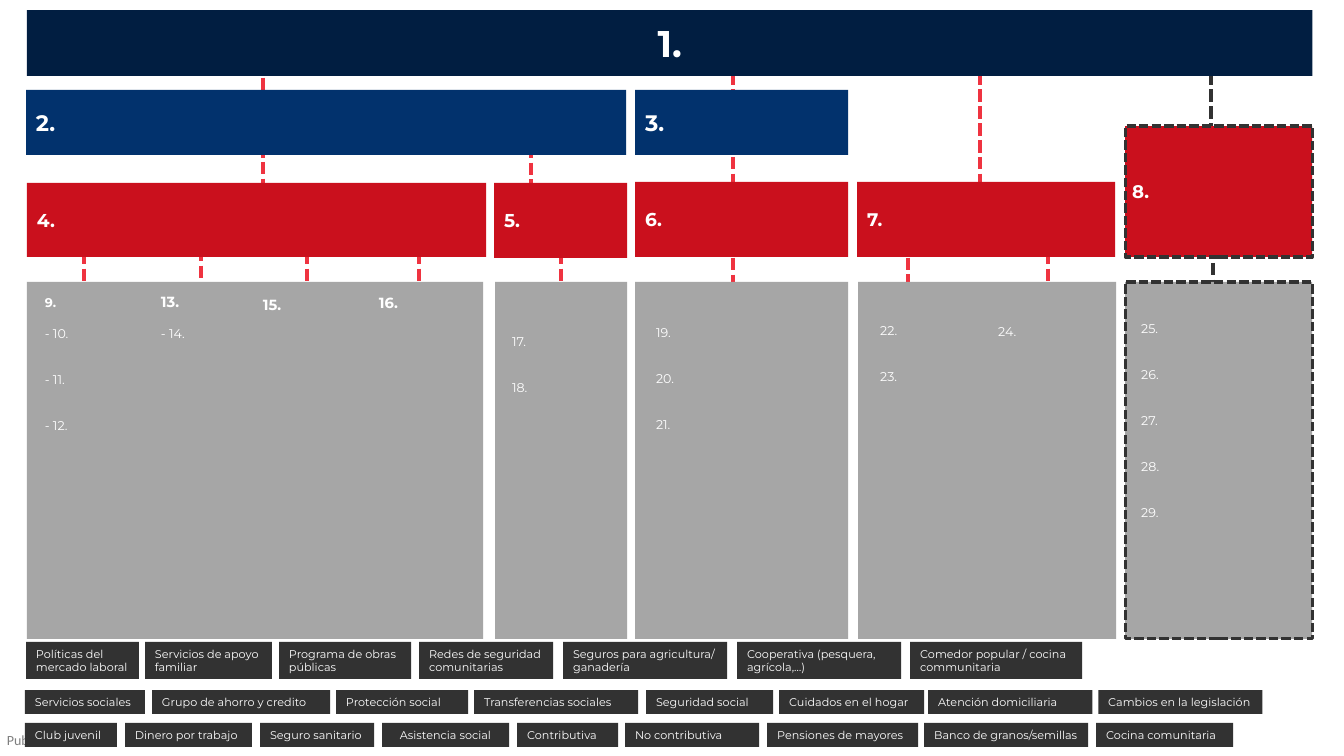
"""Build a social protection classification chart with its answer labels."""
from dataclasses import dataclass

from lxml import etree
from pptx import Presentation, util as u
from pptx.dml.color import RGBColor
from pptx.enum import dml, shapes, text
from pptx.oxml.ns import qn

PX = 9071.43


@dataclass(frozen=True)
class Theme:
    """Colours, fonts and type sizes of the slide."""
    font: str = "Montserrat"
    footer_font: str = "Calibri"
    white: str = "FFFFFF"
    navy: str = "011E41"
    blue: str = "02326D"
    red: str = "CA101D"
    bright_red: str = "EF3340"
    grey: str = "A6A6A6"
    dark: str = "323232"
    footer_grey: str = "7F7F7F"
    banner: float = 26.5
    branch: float = 16
    group: float = 13.3
    side_group: float = 13
    heading: float = 10.5
    item: float = 9
    label: float = 8
    footer: float = 10
    link_width: float = 3
    border_width: float = 2.25


THEME = Theme()

LINKS = [
    (561, 235, 347), (263, 44, 235), (733, 39, 344), (980, 39, 224),
    (908, 224, 402), (1048, 235, 413), (531, 129, 241), (84, 235, 347),
    (201, 232, 344), (307, 235, 347), (419, 235, 347),
]
DARK_LINKS = [(1211, 39, 232), (1213, 246, 358)]

PANELS = [(27, 456), (495, 132), (635, 213), (858, 258)]
PANEL_TOP, PANEL_HEIGHT = 282, 357

BRANCHES = [("2.", (26, 90, 600, 65)), ("3.", (635, 90, 213, 65))]
GROUPS = [
    ("4.", (27, 183, 459, 74), THEME.group),
    ("5.", (494, 183, 133, 75), THEME.group),
    ("6.", (635, 182, 213, 75), THEME.group),
    ("7.", (857, 182, 258, 75), THEME.side_group),
]

HEADED_LISTS = [
    ((35, 290, 145, 147), THEME.item, "9.", ["- 10.", "- 11.", "- 12."]),
    ((151, 288, 124, 74), THEME.heading, "13.", ["- 14."]),
    ((253, 291, 133, 28), THEME.heading, "15.", []),
    ((369, 289, 135, 43), THEME.heading, "16.", []),
]
PLAIN_LISTS = [
    ((502, 329, 142, 88), ["17.", "18."]),
    ((646, 320, 195, 134), ["19.", "20.", "21."]),
    ((870, 318, 118, 72), ["22.", "23."]),
    ((988, 319, 147, 26), ["24."]),
    ((1131, 316, 171, 208), ["25.", "26.", "27.", "28.", "29."]),
]
HEADING_GAP, ITEM_GAP = 11, 22

LABEL_ROWS = [
    (642, 37, [
        (26, 113, "Políticas del mercado laboral"),
        (145, 127, "Servicios de apoyo familiar"),
        (279, 132, "Programa de obras públicas"),
        (419, 134, "Redes de seguridad comunitarias"),
        (563, 164, "Seguros para agricultura/ ganadería"),
        (737, 164, "Cooperativa (pesquera, agrícola,…)"),
        (910, 172, "Comedor popular / cocina communitaria"),
    ]),
    (690, 24, [
        (25, 120, "Servicios sociales"),
        (152, 178, "Grupo de ahorro y credito"),
        (336, 132, "Protección social"),
        (474, 164, "Transferencias sociales"),
        (646, 127, "Seguridad social"),
        (779, 145, "Cuidados en el hogar"),
        (928, 164, "Atención domiciliaria"),
        (1098, 164, "Cambios en la legislación"),
    ]),
    (723, 24, [
        (25, 92, "Club juvenil"),
        (125, 127, "Dinero por trabajo"),
        (260, 114, "Seguro sanitario"),
        (382, 127, "Asistencia social"),
        (517, 101, "Contributiva"),
        (625, 134, "No contributiva"),
        (767, 151, "Pensiones de mayores"),
        (924, 164, "Banco de granos/semillas"),
        (1096, 137, "Cocina comunitaria"),
    ]),
]
CENTRED_LABEL = "Asistencia social"


def px(length):
    """Turn a length in px into EMU."""
    return u.Emu(round(length * PX))


def rgb(colour):
    """Return the colour object for a hex string."""
    return RGBColor.from_string(colour)


def style_paragraph(paragraph, size, bold=False, align=text.PP_ALIGN.LEFT,
                    colour=THEME.white, font=THEME.font):
    """Set the type and alignment of one paragraph."""
    paragraph.alignment = align
    paragraph.font.name = font
    paragraph.font.size = u.Pt(size)
    paragraph.font.bold = bold
    paragraph.font.color.rgb = rgb(colour)


def style_line(line, colour, width):
    """Draw a line in short dashes."""
    line.color.rgb = rgb(colour)
    line.width = u.Pt(width)
    line.dash_style = dml.MSO_LINE.SQUARE_DOT


def add_link(slide, x, top, bottom, colour):
    """Add a vertical dashed connector."""
    link = slide.shapes.add_connector(
        shapes.MSO_CONNECTOR.STRAIGHT, px(x), px(top), px(x), px(bottom))
    style_line(link.line, colour, THEME.link_width)
    etree.SubElement(link.element.spPr, qn("a:effectLst"))


def add_box(slide, box, fill, words="", size=THEME.label, bold=False,
            align=text.PP_ALIGN.LEFT, dashed=False):
    """Add a filled rectangle with optional words and dashed border."""
    shape = slide.shapes.add_shape(
        shapes.MSO_SHAPE.RECTANGLE, *map(px, box))
    shape.shadow.inherit = False
    shape.fill.solid()
    shape.fill.fore_color.rgb = rgb(fill)
    if dashed:
        style_line(shape.line, THEME.dark, THEME.border_width)
    else:
        shape.line.fill.background()
    if words:
        shape.text_frame.text = words
        style_paragraph(shape.text_frame.paragraphs[0], size, bold, align)
    return shape


def add_list(slide, box, items, heading=None, heading_size=THEME.item):
    """Add a spaced list of numbers, with a bold heading if one is given."""
    frame = slide.shapes.add_textbox(*map(px, box)).text_frame
    frame.word_wrap = True
    frame.text = "\n".join(([heading] if heading else []) + items)
    for index, paragraph in enumerate(frame.paragraphs):
        is_heading = bool(heading) and index == 0
        style_paragraph(paragraph, heading_size if is_heading else THEME.item,
                        is_heading)
        if index:
            after_heading = heading and index == 1
            paragraph.space_before = u.Pt(
                HEADING_GAP if after_heading else ITEM_GAP)


def add_footer(slide):
    """Add the classification mark at the lower left."""
    frame = slide.shapes.add_textbox(*map(px, (7, 732, 38, 17))).text_frame
    frame.margin_left = frame.margin_right = 0
    frame.margin_top = frame.margin_bottom = 0
    frame.word_wrap = False
    frame.text = "Public"
    style_paragraph(frame.paragraphs[0], THEME.footer,
                    colour=THEME.footer_grey, font=THEME.footer_font)


def place_banner(slide):
    """Turn the title placeholder into the top band, above the links."""
    banner = slide.shapes.title
    banner.left, banner.top, banner.width, banner.height = map(
        px, (27, 10, 1285, 66))
    banner.fill.solid()
    banner.fill.fore_color.rgb = rgb(THEME.navy)
    frame = banner.text_frame
    frame.text = "1."
    frame.auto_size = text.MSO_AUTO_SIZE.NONE
    frame.vertical_anchor = text.MSO_ANCHOR.MIDDLE
    style_paragraph(frame.paragraphs[0], THEME.banner, True,
                    text.PP_ALIGN.CENTER)
    banner.element.getparent().append(banner.element)


def main():
    """Build the slide and save it."""
    presentation = Presentation()
    presentation.slide_width = u.Inches(13.33)
    presentation.slide_height = u.Inches(7.5)
    slide = presentation.slides.add_slide(presentation.slide_layouts[5])

    add_footer(slide)
    for link in LINKS:
        add_link(slide, *link, THEME.bright_red)
    for link in DARK_LINKS:
        add_link(slide, *link, THEME.dark)
    place_banner(slide)

    for left, width in PANELS:
        add_box(slide, (left, PANEL_TOP, width, PANEL_HEIGHT), THEME.grey)
    add_box(slide, (1125, PANEL_TOP, 187, PANEL_HEIGHT), THEME.grey,
            dashed=True)
    for words, box in BRANCHES:
        add_box(slide, box, THEME.blue, words, THEME.branch, True)
    for words, box, size in GROUPS:
        add_box(slide, box, THEME.red, words, size, True)
    side_group = add_box(slide, (1125, 126, 187, 131), THEME.red, "8.",
                         THEME.side_group, True, dashed=True)
    side_group.text_frame.margin_left = px(7)

    for box, size, heading, items in HEADED_LISTS:
        add_list(slide, box, items, heading, size)
    for box, items in PLAIN_LISTS:
        add_list(slide, box, items)

    for top, height, labels in LABEL_ROWS:
        for left, width, words in labels:
            align = (text.PP_ALIGN.CENTER if words == CENTRED_LABEL
                     else text.PP_ALIGN.LEFT)
            add_box(slide, (left, top, width, height), THEME.dark, words,
                    align=align)
    presentation.save("out.pptx")


if __name__ == "__main__":
    main()
